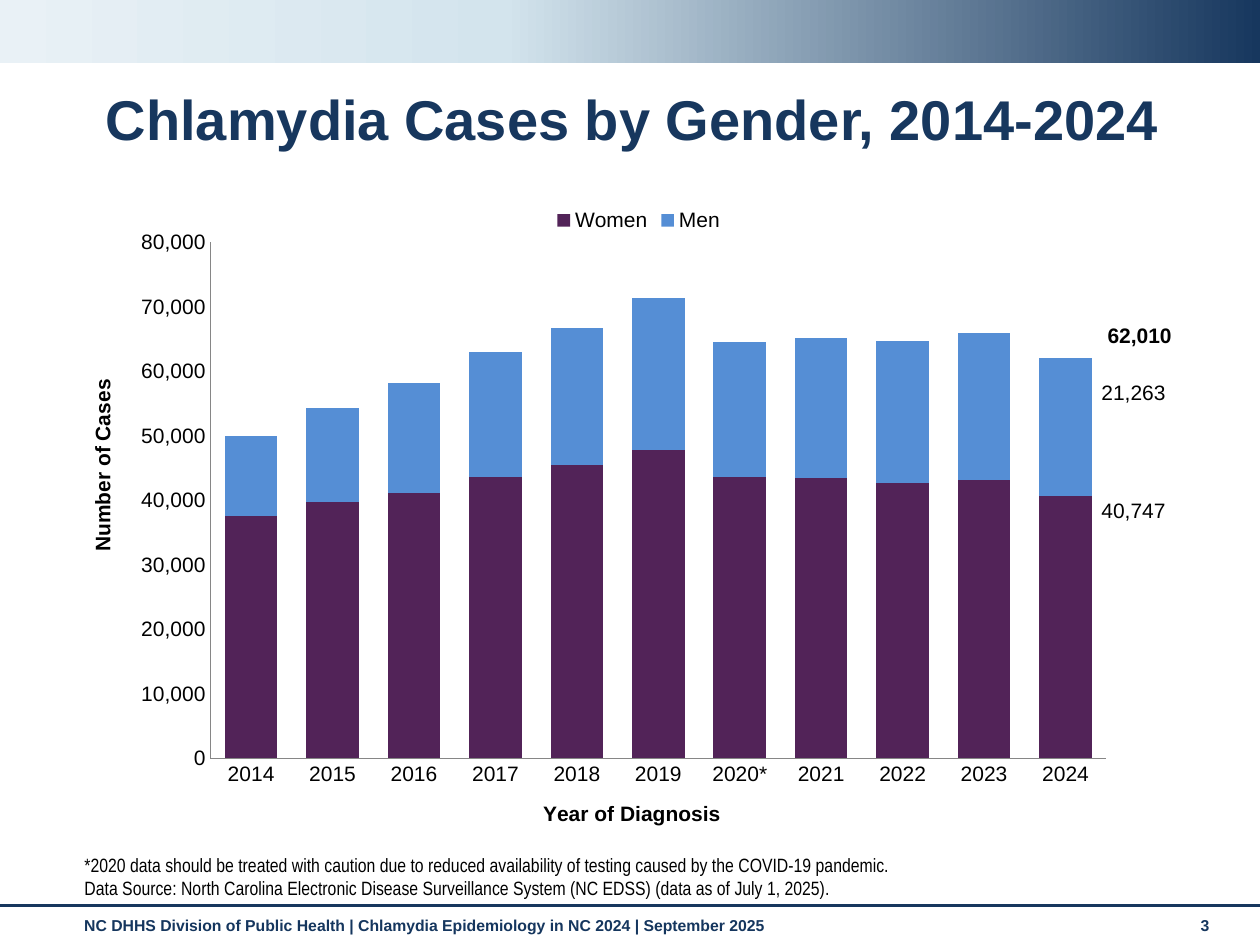
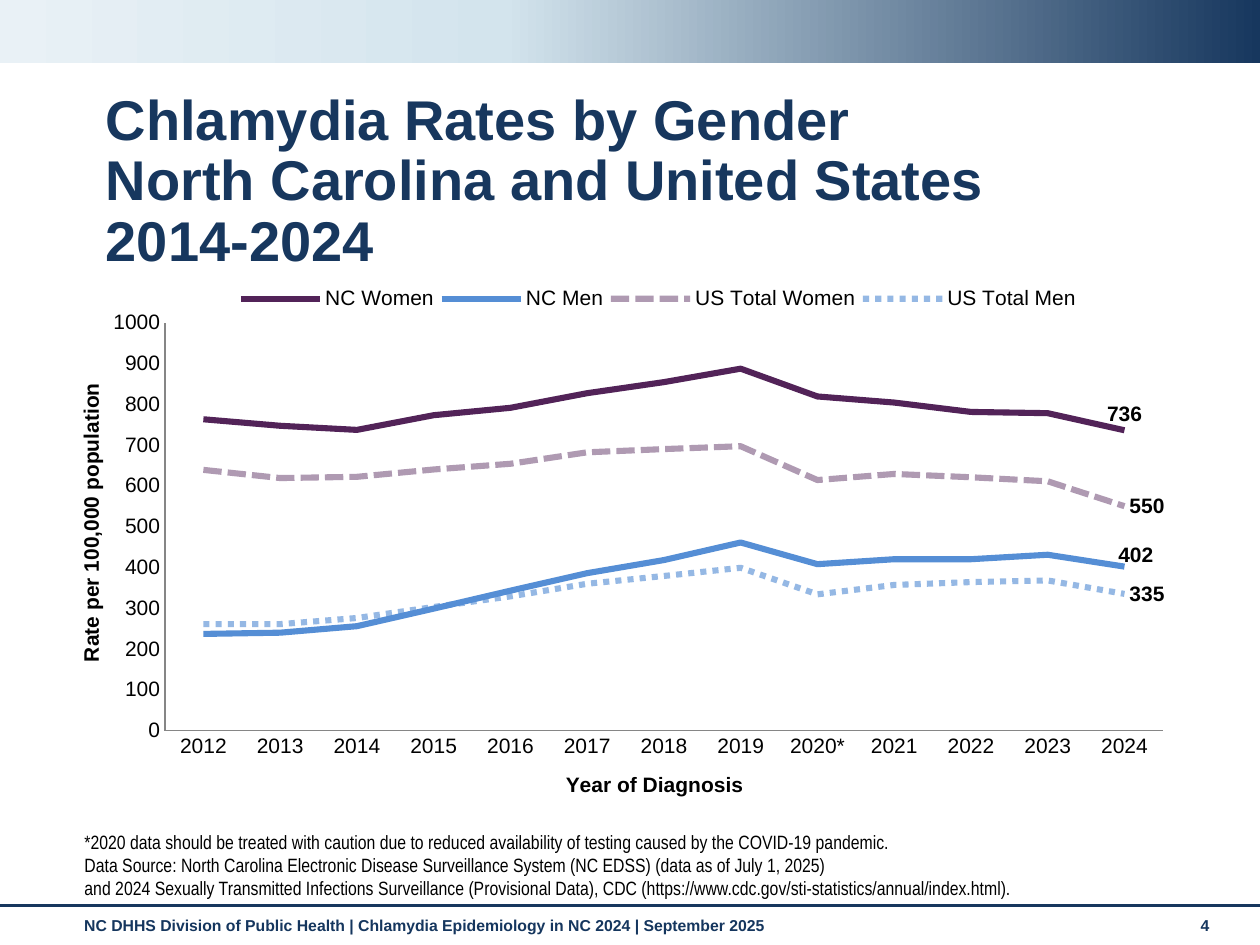
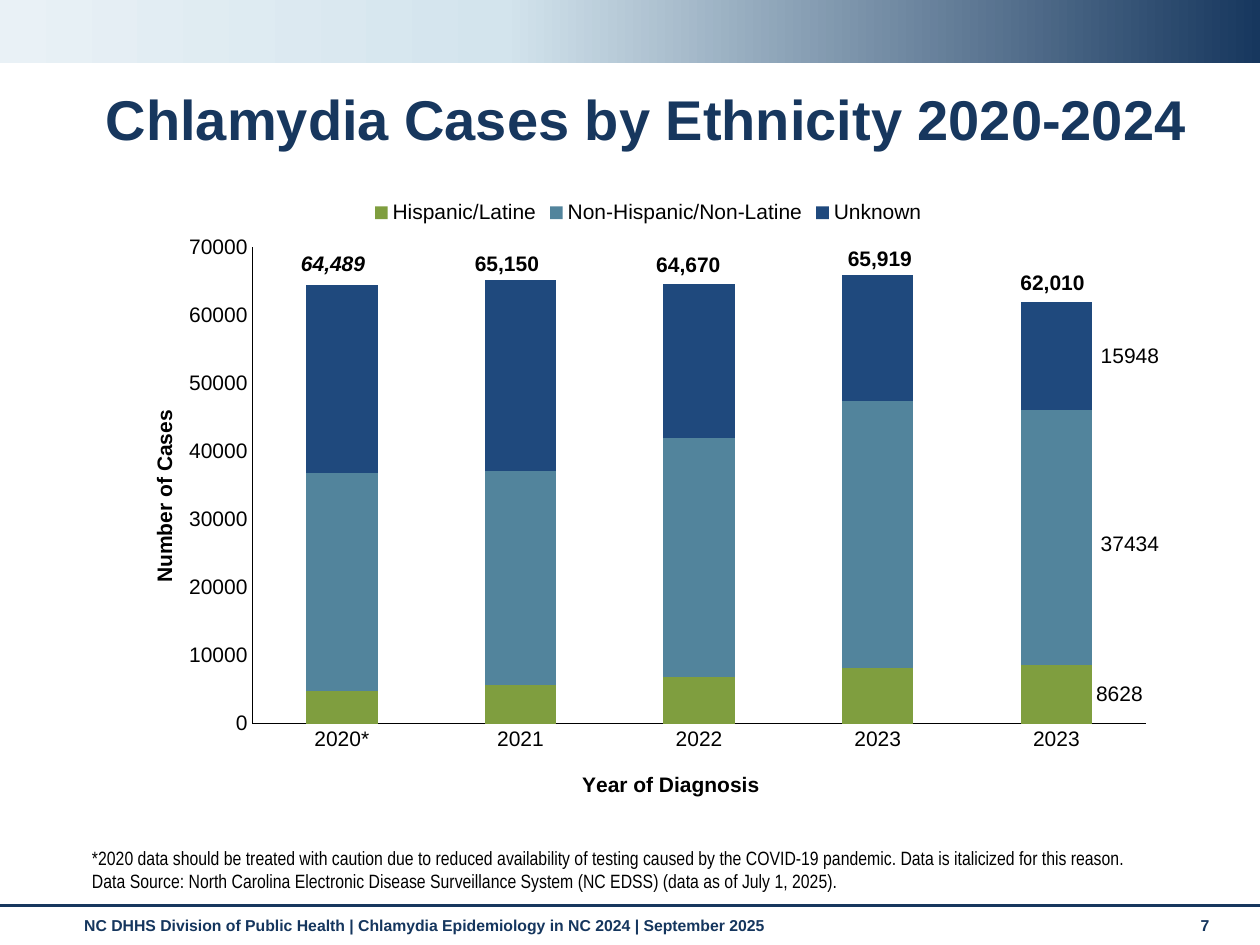
from copy import deepcopy

from lxml import etree
from pptx import Presentation
from pptx.chart.data import CategoryChartData
from pptx.dml.color import RGBColor
from pptx.enum.chart import XL_CHART_TYPE, XL_LABEL_POSITION, XL_LEGEND_POSITION, XL_TICK_MARK
from pptx.enum.dml import MSO_LINE
from pptx.enum.shapes import MSO_CONNECTOR, MSO_SHAPE
from pptx.enum.text import MSO_ANCHOR, MSO_AUTO_SIZE, PP_ALIGN
from pptx.oxml.ns import qn
from pptx.util import Emu, Inches, Pt

STACKED, LINE = XL_CHART_TYPE.COLUMN_STACKED, XL_CHART_TYPE.LINE
INSIDE_END, CENTER = XL_LABEL_POSITION.INSIDE_END, XL_LABEL_POSITION.CENTER
ABOVE, RIGHT = XL_LABEL_POSITION.ABOVE, XL_LABEL_POSITION.RIGHT
LEGEND_TOP, NO_TICK = XL_LEGEND_POSITION.TOP, XL_TICK_MARK.NONE
DASHED, DOTTED = MSO_LINE.SQUARE_DOT, MSO_LINE.ROUND_DOT
TOP, BOTTOM = MSO_ANCHOR.TOP, MSO_ANCHOR.BOTTOM
LEFT, MIDDLE = PP_ALIGN.LEFT, PP_ALIGN.CENTER

BLACK = RGBColor(0x00, 0x00, 0x00)
AXIS_GRAY = RGBColor(0x86, 0x86, 0x86)
NAVY = RGBColor(0x17, 0x37, 0x5E)
FOOTER_NAVY = RGBColor(0x15, 0x36, 0x5E)
PALE_BLUE = RGBColor(0xD3, 0xE4, 0xED)
MIST = RGBColor(0xE9, 0xF1, 0xF6)
PLUM = RGBColor(0x52, 0x23, 0x58)
SKY = RGBColor(0x55, 0x8E, 0xD5)
OLIVE = RGBColor(0x7F, 0x9E, 0x3F)
TEAL = RGBColor(0x52, 0x84, 0x9C)
ROYAL = RGBColor(0x1F, 0x49, 0x7D)

SLIDE_WIDTH, SLIDE_HEIGHT = Inches(10), Inches(7.5)
COLUMNS, ROWS = 100, 75
FOOTER = "NC DHHS Division of Public Health | Chlamydia Epidemiology in NC 2024 | September 2025"
CAUTION = ("*2020 data should be treated with caution due to reduced availability "
           "of testing caused by the COVID-19 pandemic.")
SOURCE = ("Data Source: North Carolina Electronic Disease Surveillance System (NC EDSS) "
          "(data as of July 1, 2025)")
CDC_SOURCE = ("and 2024 Sexually Transmitted Infections Surveillance (Provisional Data), CDC "
              "(https://www.cdc.gov/sti-statistics/annual/index.html).")


def across(columns):
    """Turn grid columns into a length."""
    return Emu(int(SLIDE_WIDTH * columns / COLUMNS))


def down(rows):
    """Turn grid rows into a length."""
    return Emu(int(SLIDE_HEIGHT * rows / ROWS))


def area(left, top, width, height):
    """Turn a grid area into left, top, width and height lengths."""
    return across(left), down(top), across(width), down(height)


def style_font(font, size, color=BLACK, bold=False, italic=False, family="Arial"):
    """Set every property of a font."""
    font.name, font.size, font.bold, font.italic = family, Pt(size), bold, italic
    font.color.rgb = color


def add_text(slide, text, box, size=12, color=BLACK, italic=False, align=LEFT):
    """Add a bold one-line text box."""
    frame = slide.shapes.add_textbox(*area(*box)).text_frame
    frame.word_wrap = True
    frame.text = text
    line = frame.paragraphs[0]
    line.alignment = align
    style_font(line.font, size, color, True, italic)


def fill_placeholder(placeholder, text, box, anchor):
    """Move a placeholder, fill it and return its paragraphs."""
    placeholder.left, placeholder.top, placeholder.width, placeholder.height = area(*box)
    frame = placeholder.text_frame
    frame.text = text
    frame.vertical_anchor = anchor
    frame.word_wrap = True
    frame.auto_size = MSO_AUTO_SIZE.NONE
    for paragraph in frame.paragraphs:
        paragraph.alignment = LEFT
        paragraph.space_before = Pt(0)
    return frame.paragraphs


def add_frame(slide):
    """Draw the band, rule and footer and hand them to the slide's layout."""
    band = slide.shapes.add_shape(MSO_SHAPE.RECTANGLE, *area(0, 0, COLUMNS, 5))
    band.shadow.inherit = False
    band.line.fill.background()
    band.fill.gradient()
    band.fill.gradient_angle = 180
    stops = band._element.spPr.find(qn("a:gradFill")).find(qn("a:gsLst"))
    stops.append(deepcopy(stops[0]))
    shades = ((0, NAVY), (0.6, PALE_BLUE), (1, MIST))
    for stop, (position, shade) in zip(band.fill.gradient_stops, shades):
        stop.position, stop.color.rgb = position, shade

    rule = slide.shapes.add_connector(
        MSO_CONNECTOR.STRAIGHT, 0, down(71.9), SLIDE_WIDTH, down(71.9))
    rule.line.color.rgb, rule.line.width = NAVY, Pt(1.75)
    etree.SubElement(rule._element.spPr, qn("a:effectLst"))

    add_text(slide, FOOTER, (5.7, 72.2, 87.4, 2.9), 9, FOOTER_NAVY)
    layout_tree = slide.slide_layout.shapes._spTree
    for part in list(slide.shapes)[-3:]:
        layout_tree.append(part._element)


def add_page(deck, number, title, title_width, notes, notes_box):
    """Add a slide with its title, source notes and page number."""
    slide = deck.slides.add_slide(deck.slide_layouts[1])
    heading, sources = slide.placeholders
    for line in fill_placeholder(heading, title, (7.4, 6.8, title_width, 6), TOP):
        line.line_spacing = 0.9
        style_font(line.font, 32, NAVY, True)
    for line in fill_placeholder(sources, "\n".join(notes), notes_box, BOTTOM):
        style_font(line.font, 11, family="Arial Narrow")
        properties = line._p.get_or_add_pPr()
        properties.set("marL", "0")
        properties.set("indent", "0")
        etree.SubElement(properties, qn("a:buNone"))
    if len(deck.slides) == 1:
        add_frame(slide)
    add_text(slide, str(number), (94.3, 72.2, 4.4, 3), 9, FOOTER_NAVY)
    return slide


def set_layout(parent, after=None, **settings):
    """Give a chart part a manual layout, placed behind the child named by after."""
    for old in parent.findall(qn("c:layout")):
        parent.remove(old)
    before = parent.find(qn(after)) if after else None
    layout = etree.Element(qn("c:layout"))
    parent.insert(0 if before is None else parent.index(before) + 1, layout)
    manual = etree.SubElement(layout, qn("c:manualLayout"))
    for setting, value in settings.items():
        etree.SubElement(manual, qn("c:" + setting)).set("val", str(value))


def add_chart(slide, kind, box, categories, series, plot_area, legend_at, number_format="General"):
    """Add a chart with a top legend and a fixed plot area."""
    data = CategoryChartData(number_format=number_format)
    data.categories = categories
    for name, values in series:
        data.add_series(name, values)
    chart = slide.shapes.add_chart(kind, *area(*box), data).chart
    style_font(chart.font, 12)
    chart.has_title = False
    chart.has_legend = True
    chart.legend.position = LEGEND_TOP
    chart.legend.include_in_layout = False
    style_font(chart.legend.font, 12)
    set_layout(chart.legend._element, "c:legendPos", xMode="edge", yMode="edge",
               **dict(zip("xywh", legend_at)))
    set_layout(chart._chartSpace.chart.plotArea, layoutTarget="inner", xMode="edge",
               yMode="edge", **dict(zip("xywh", plot_area)))
    return chart


def style_axis(axis, title, title_at, line_color, number_format=None):
    """Give an axis its title, line and labels."""
    axis.has_major_gridlines = False
    axis.major_tick_mark = axis.minor_tick_mark = NO_TICK
    axis.format.line.color.rgb, axis.format.line.width = line_color, Pt(0.75)
    style_font(axis.tick_labels.font, 12)
    if number_format:
        axis.tick_labels.number_format = number_format
        axis.tick_labels.number_format_is_linked = False
    axis.has_title = True
    axis.axis_title.text_frame.text = title
    style_font(axis.axis_title.text_frame.paragraphs[0].font, 12, bold=True)
    set_layout(axis.axis_title._element, "c:tx", xMode="edge", yMode="edge",
               **dict(zip("xy", title_at)))


def style_axes(chart, value_title, value_at, year_at, maximum, step, line_color, number_format):
    """Style the year axis and the value axis."""
    style_axis(chart.category_axis, "Year of Diagnosis", year_at, line_color)
    style_axis(chart.value_axis, value_title, value_at, line_color, number_format)
    chart.value_axis.minimum_scale, chart.value_axis.maximum_scale = 0, maximum
    chart.value_axis.major_unit = step


def label_last(series, position, shift=None, bold=False):
    """Label only the last value of a series, moved by shares of the chart."""
    series.data_labels.show_value = False
    for leader in series._element.iter(qn("c:showLeaderLines")):
        leader.set("val", "0")
    last = len(list(series.values)) - 1
    label = series.points[last].data_label
    style_font(label.font, 12, bold=bold)
    label.position = position
    if shift:
        entry = series._element.find(qn("c:dLbls")).find(qn("c:dLbl"))
        set_layout(entry, "c:idx", **dict(zip("xy", shift)))


def style_columns(chart, gap, position, looks):
    """Stack the columns, colour them and label the last one."""
    plot = chart.plots[0]
    plot.gap_width, plot.overlap, plot.vary_by_categories = gap, 100, False
    for series, (color, shift) in zip(plot.series, looks):
        series.format.fill.solid()
        series.format.fill.fore_color.rgb = color
        label_last(series, position, shift)


def style_lines(chart, looks):
    """Colour and dash the lines and label their ends."""
    chart.plots[0].vary_by_categories = False
    for series, (color, dash, opacity, position, shift) in zip(chart.plots[0].series, looks):
        series.smooth = False
        stroke = series.format.line
        stroke.color.rgb, stroke.width = color, Pt(3.5)
        if dash:
            stroke.dash_style = dash
            shade = next(series._element.spPr.iter(qn("a:srgbClr")))
            etree.SubElement(shade, qn("a:alpha")).set("val", str(opacity * 1000))
        label_last(series, position, shift, True)


def add_gender_cases(deck):
    """Build the slide of cases by gender."""
    slide = add_page(deck, 3, "Chlamydia Cases by Gender, 2014-2024", 87.6,
                     (CAUTION, SOURCE + "."), (5.7, 68.3, 87.4, 3.6))
    years = [str(year) + "*" * (year == 2020) for year in range(2014, 2025)]
    cases = (
        ("Women", (37584, 39798, 41209, 43627, 45558, 47835, 43616, 43409, 42691, 43108, 40747)),
        ("Men", (12388, 14590, 16963, 19330, 21154, 23546, 20872, 21741, 21978, 22811, 21263)),
    )
    chart = add_chart(slide, STACKED, (5, 15.2, 90, 50.8), years, cases,
                      (0.13, 0.08, 0.79, 0.81), (0.43, 0.02), "#,##0")
    style_axes(chart, "Number of Cases", (0.02, 0.29), (0.42, 0.95),
               80000, 10000, AXIS_GRAY, "#,##0")
    style_columns(chart, 55, INSIDE_END, ((PLUM, (0.06, 0)), (SKY, (0.06, 0.03))))
    add_text(slide, "62,010", (85.9, 25.1, 9.1, 3), align=MIDDLE)


def add_gender_rates(deck):
    """Build the slide of rates by gender."""
    title = "Chlamydia Rates by Gender\vNorth Carolina and United States\v2014-2024"
    slide = add_page(deck, 4, title, 92.6, (CAUTION, SOURCE, CDC_SOURCE), (5.7, 68.3, 91, 3.6))
    years = [str(year) + "*" * (year == 2020) for year in range(2012, 2025)]
    rates = (
        ("NC Women", (763, 747, 737, 773, 791, 827, 854, 887, 819, 804, 781, 778, 736)),
        ("NC Men", (237, 240, 256, 299, 343, 386, 418, 461, 408, 420, 420, 431, 402)),
        ("US Total Women", (639, 619, 622, 640, 654, 682, 690, 697, 614, 629, 621, 611, 550)),
        ("US Total Men", (261, 261, 276, 303, 329, 360, 379, 399, 334, 357, 364, 368, 335)),
    )
    chart = add_chart(slide, LINE, (5, 21.4, 90, 42.3), years, rates,
                      (0.09, 0.1, 0.88, 0.77), (0.15, 0.02, 0.75, 0.07))
    style_axes(chart, "Rate per 100,000 population", (0.01, 0.21), (0.44, 0.94),
               1000, 100, AXIS_GRAY, "0")
    style_lines(chart, (
        (PLUM, None, 100, ABOVE, None),
        (SKY, None, 100, ABOVE, (0.01, 0.01)),
        (PLUM, DASHED, 46, RIGHT, None),
        (SKY, DOTTED, 62, RIGHT, None),
    ))


def add_ethnicity_cases(deck):
    """Build the slide of cases by ethnicity."""
    slide = add_page(deck, 7, "Chlamydia Cases by Ethnicity 2020-2024", 91.1,
                     (CAUTION + " Data is italicized for this reason.", SOURCE + "."),
                     (6.3, 65, 87.4, 6.3))
    cases = (
        ("Hispanic/Latine", (4757, 5715, 6831, 8123, 8628)),
        ("Non-Hispanic/Non-Latine", (32032, 31375, 35103, 39366, 37434)),
        ("Unknown", (27700, 28060, 22736, 18430, 15948)),
    )
    chart = add_chart(slide, STACKED, (9.2, 14.6, 83.4, 50.4),
                      ("2020*", "2021", "2022", "2023", "2023"), cases,
                      (0.13, 0.1, 0.85, 0.75), (0.24, 0.02), "0")
    style_axes(chart, "Number of Cases", (0.03, 0.35), (0.44, 0.92), 70000, 10000, BLACK, "0")
    style_columns(chart, 150, CENTER,
                  ((OLIVE, (0.06, 0)), (TEAL, (0.07, 0.01)), (ROYAL, (0.07, 0))))
    totals = (("64,489", 22.9, 19.4), ("65,150", 36.7, 19.4), ("64,670", 51.1, 19.5),
              ("65,919", 66.3, 19), ("62,010", 80, 20.9))
    for order, (total, left, top) in enumerate(totals):
        add_text(slide, total, (left, top, 7.2, 3), italic=order == 0)


def main():
    """Build the three slides and save the deck."""
    deck = Presentation()
    deck.slide_width, deck.slide_height = SLIDE_WIDTH, SLIDE_HEIGHT
    add_gender_cases(deck)
    add_gender_rates(deck)
    add_ethnicity_cases(deck)
    deck.save("out.pptx")


if __name__ == "__main__":
    main()
